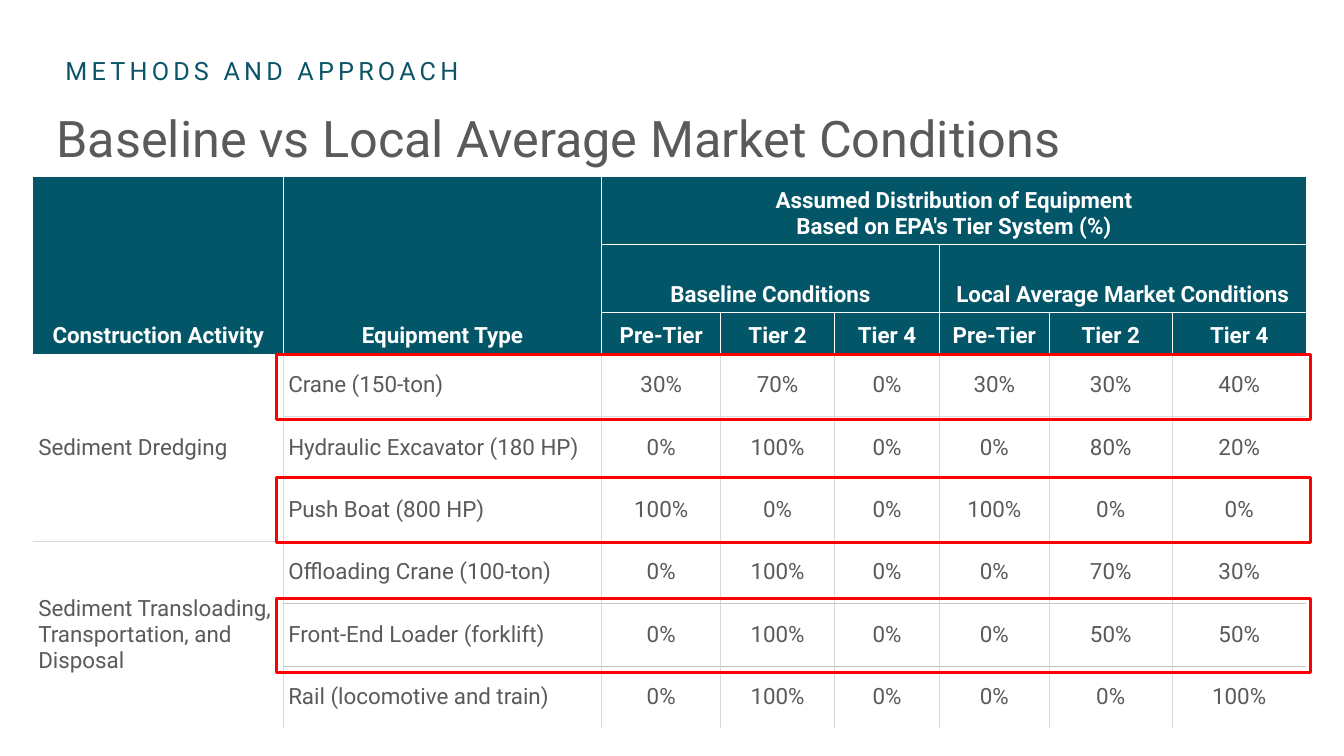
from lxml import etree
from pptx import Presentation
from pptx.dml.color import RGBColor
from pptx.enum.shapes import MSO_SHAPE
from pptx.enum.text import MSO_ANCHOR, PP_ALIGN
from pptx.oxml.ns import qn
from pptx.util import Pt

LEFT, CENTER = PP_ALIGN.LEFT, PP_ALIGN.CENTER
TOP, MIDDLE, BOTTOM = MSO_ANCHOR.TOP, MSO_ANCHOR.MIDDLE, MSO_ANCHOR.BOTTOM
RECTANGLE = MSO_SHAPE.RECTANGLE

# Content
SECTION = "METHODS AND APPROACH"
TITLE = "Baseline vs Local Average Market Conditions"
TIERS = ["Pre-Tier", "Tier 2", "Tier 4"]
HEADERS = [
    ["Construction Activity", "Equipment Type",
     "Assumed Distribution of Equipment\nBased on EPA's Tier System (%)"],
    ["", "", "Baseline Conditions", "", "", "Local Average Market Conditions"],
    ["", ""] + TIERS * 2,
]
ACTIVITIES = ["Sediment Dredging", "Sediment Transloading, Transportation, and Disposal"]
EQUIPMENT = [
    ("Crane (150-ton)", 30, 70, 0, 30, 30, 40),
    ("Hydraulic Excavator (180 HP)", 0, 100, 0, 0, 80, 20),
    ("Push Boat (800 HP)", 100, 0, 0, 100, 0, 0),
    ("Offloading Crane (100-ton)", 0, 100, 0, 0, 70, 30),
    ("Front-End Loader (forklift)", 0, 100, 0, 0, 50, 50),
    ("Rail (locomotive and train)", 0, 100, 0, 0, 0, 100),
]

# Layout in points
TABLE_LEFT, TABLE_TOP = 23.76, 126.72
COLUMN_WIDTHS = [178.56, 227.52, 84.96, 81.36, 74.88, 78.48, 87.84, 95.76]
ROW_HEIGHTS = [48.24, 48.24, 29.52] + [44.64] * len(EQUIPMENT)
HEADER_ROWS = len(HEADERS)
# First row, first column, rows, columns
SPANS = [(0, 0, 3, 1), (0, 1, 3, 1), (0, 2, 1, 6), (1, 2, 1, 3),
         (1, 5, 1, 3), (3, 0, 3, 1), (6, 0, 3, 1)]
HIGHLIGHTS = [(253.44, 46.08), (341.28, 46.08), (427.68, 52.56)]  # top, height

FONT = "Roboto"
TEAL, HEADER_FILL, WHITE = "0C5568", "035568", "FFFFFF"
GRAY, RED = "5A5A5A", "FF0000"
HEADER_RULE, GRID_RULE, THIN_RULE = (WHITE, 1), ("D9D9D9", 1), ("BEC8BE", 0.5)


def color(value):
    return RGBColor.from_string(value)


def write(frame, text, *, size=16, ink=GRAY, bold=False, align=LEFT, spacing=0):
    """Fill a text frame, one paragraph for each line of text."""
    for index, line in enumerate(text.split("\n")):
        para = frame.add_paragraph() if index else frame.paragraphs[0]
        para.alignment = align
        span = para.add_run()
        span.text = line
        span.font.name, span.font.size, span.font.bold = FONT, Pt(size), bold
        span.font.color.rgb = color(ink)
        if spacing:
            span.font._element.set("spc", str(spacing * 100))


def add_text(page, text, left, top, width, height, *, anchor, inset=0, **style):
    frame = page.shapes.add_textbox(Pt(left), Pt(top), Pt(width), Pt(height)).text_frame
    frame.word_wrap = True
    frame.vertical_anchor = anchor
    frame.margin_left = frame.margin_right = 0
    frame.margin_top = frame.margin_bottom = Pt(inset)
    write(frame, text, **style)


def owner(row, column):
    """Give the cell that holds a grid position, or None outside the grid."""
    if not (0 <= row < len(ROW_HEIGHTS) and 0 <= column < len(COLUMN_WIDTHS)):
        return None
    for top, left, rows, columns in SPANS:
        if top <= row < top + rows and left <= column < left + columns:
            return top, left
    return row, column


def rule_between(first, second):
    """Choose the rule between two neighbouring grid positions."""
    if None in (owner(*first), owner(*second)) or owner(*first) == owner(*second):
        return None
    row, column = second
    if row < HEADER_ROWS:
        return HEADER_RULE
    if first[0] == row:
        return GRID_RULE
    if row == HEADER_ROWS:
        return None
    return GRID_RULE if column == 0 or row < HEADER_ROWS + 3 else THIN_RULE


def set_borders(cell, row, column):
    here = (row, column)
    rules = {
        "a:lnL": rule_between((row, column - 1), here),
        "a:lnR": rule_between(here, (row, column + 1)),
        "a:lnT": rule_between((row - 1, column), here),
        "a:lnB": rule_between(here, (row + 1, column)),
    }
    properties = cell._tc.get_or_add_tcPr()
    for position, (tag, rule) in enumerate(rules.items()):
        line = etree.Element(qn(tag))
        if rule:
            line.set("w", str(Pt(rule[1])))
            fill = etree.SubElement(line, qn("a:solidFill"))
            etree.SubElement(fill, qn("a:srgbClr"), val=rule[0])
        else:
            etree.SubElement(line, qn("a:noFill"))
        properties.insert(position, line)


def add_equipment_table(page):
    body = [["", name] + [f"{share}%" for share in shares] for name, *shares in EQUIPMENT]
    for index, activity in enumerate(ACTIVITIES):
        body[index * 3][0] = activity
    grid = [line + [""] * (len(COLUMN_WIDTHS) - len(line)) for line in HEADERS + body]
    table = page.shapes.add_table(
        len(ROW_HEIGHTS), len(COLUMN_WIDTHS), Pt(TABLE_LEFT), Pt(TABLE_TOP),
        Pt(sum(COLUMN_WIDTHS)), Pt(sum(ROW_HEIGHTS))).table
    table.first_row = table.horz_banding = False
    for column, width in zip(table.columns, COLUMN_WIDTHS):
        column.width = Pt(width)
    for row, height in zip(table.rows, ROW_HEIGHTS):
        row.height = Pt(height)
    for top, left, rows, columns in SPANS:
        table.cell(top, left).merge(table.cell(top + rows - 1, left + columns - 1))

    for row, line in enumerate(grid):
        header = row < HEADER_ROWS
        for column, text in enumerate(line):
            cell = table.cell(row, column)
            cell.margin_left = cell.margin_right = Pt(3.6)
            cell.margin_top = cell.margin_bottom = Pt(3.6)
            cell.vertical_anchor = BOTTOM if header else MIDDLE
            if header:
                cell.fill.solid()
                cell.fill.fore_color.rgb = color(HEADER_FILL)
            else:
                cell.fill.background()
            set_borders(cell, row, column)
            if text:
                write(cell.text_frame, text, ink=WHITE if header else GRAY, bold=header,
                      align=CENTER if header or column > 1 else LEFT)


def add_highlight(page, top, height):
    box = page.shapes.add_shape(RECTANGLE, Pt(197.28), Pt(top), Pt(738.72), Pt(height))
    box.shadow.inherit = False
    box.fill.background()
    box.line.color.rgb = color(RED)
    box.line.width = Pt(2)


def main():
    deck = Presentation()
    deck.slide_width, deck.slide_height = Pt(960), Pt(540)
    page = deck.slides.add_slide(deck.slide_layouts[6])

    # Headings
    add_text(page, SECTION, 46.8, 39.6, 468, 21.6, anchor=MIDDLE,
             size=18, ink=TEAL, spacing=3)
    add_text(page, TITLE, 40.32, 72.72, 865.44, 56.16, anchor=TOP, inset=3.6, size=36)

    # Table and highlighted rows
    add_equipment_table(page)
    for top, height in HIGHLIGHTS:
        add_highlight(page, top, height)

    deck.save("out.pptx")


if __name__ == "__main__":
    main()
